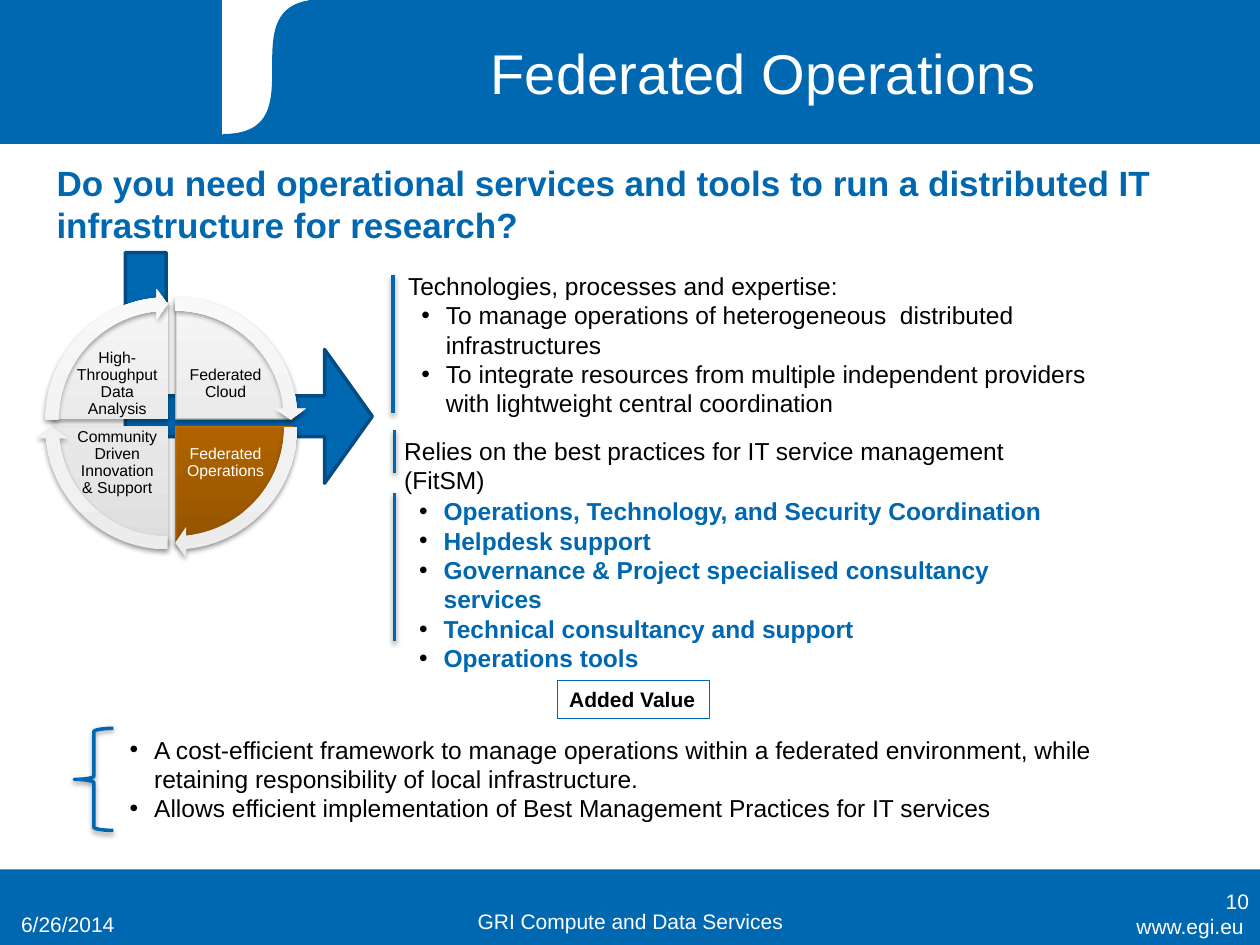
import lxml.etree
import pptx
import pptx.dml.color
import pptx.enum.shapes
import pptx.enum.text
import pptx.oxml
import pptx.oxml.ns
import pptx.util

Pt = pptx.util.Pt
RGB = pptx.dml.color.RGBColor
KIND = pptx.enum.shapes.MSO_SHAPE
ALIGN = pptx.enum.text.PP_ALIGN
ANCHOR = pptx.enum.text.MSO_ANCHOR
qn = pptx.oxml.ns.qn

BLUE = RGB(0x00, 0x67, 0xB1)
NAVY = RGB(0x00, 0x4C, 0x83)
WHITE = RGB(0xFF, 0xFF, 0xFF)
BLACK = RGB(0x00, 0x00, 0x00)
GREY = RGB(0xAF, 0xAF, 0xAF)
AMBER = RGB(0xC4, 0x6F, 0x00)

# Gradients: (position in percent, colour), from bottom to top
PALE = [(0, RGB(0xDD, 0xDD, 0xDD)), (35, RGB(0xE7, 0xE7, 0xE7)), (100, RGB(0xF6, 0xF6, 0xF6))]
LIGHT = [(0, RGB(0xEC, 0xEC, 0xEC)), (35, RGB(0xF1, 0xF1, 0xF1)), (100, RGB(0xF9, 0xF9, 0xF9))]
BROWN = [(0, RGB(0x95, 0x54, 0x00)), (80, RGB(0xC2, 0x6D, 0x00)), (100, RGB(0xC3, 0x6E, 0x00))]

# Wheel angles, in adjustment units (60000 per degree / 100000)
TURN, QUARTER, SWEEP = 216, 54, 50.725


def put(item, values):
    for name, value in values.items():
        setattr(item, name, value)


def sub(node, tag, **values):
    child = lxml.etree.SubElement(node, qn(tag))
    for name, value in values.items():
        child.set(name, str(value))
    return child


def shade(props):
    """Give a soft drop shadow to shape properties."""
    effects = props.find(qn("a:effectLst"))
    if effects is None:
        effects = sub(props, "a:effectLst")
    shadow = sub(effects, "a:outerShdw", blurRad=Pt(3.1), dist=Pt(1.6),
                 dir=5400000, algn="ctr", rotWithShape=0)
    sub(sub(shadow, "a:srgbClr", val="000000"), "a:alpha", val=38000)


def blend(shape, stops):
    """Fill a shape with an upward gradient."""
    shape.fill.gradient()
    grad = shape._element.spPr.find(qn("a:gradFill"))
    for child in list(grad):
        grad.remove(child)
    row = sub(grad, "a:gsLst")
    for spot, color in stops:
        sub(sub(row, "a:gs", pos=spot * 1000), "a:srgbClr", val=color)
    sub(grad, "a:lin", ang=16200000, scaled=0)


def paint(shape, fill=None, line=None, width=0.75, shadow=False):
    shape.shadow.inherit = False
    if isinstance(fill, list):
        blend(shape, fill)
    elif fill is None:
        shape.fill.background()
    else:
        shape.fill.solid()
        shape.fill.fore_color.rgb = fill
    if line is None:
        shape.line.fill.background()
    else:
        shape.line.color.rgb = line
        shape.line.width = Pt(width)
    if shadow:
        shade(shape._element.spPr)
    return shape


def draw(slide, kind, box, adjust=(), **style):
    shape = slide.shapes.add_shape(kind, *map(Pt, box))
    for index, value in enumerate(adjust):
        shape.adjustments[index] = value
    return paint(shape, **style)


def bar(slide, x, top, base):
    line = slide.shapes.add_connector(pptx.enum.shapes.MSO_CONNECTOR.STRAIGHT,
                                      Pt(x), Pt(top), Pt(x), Pt(base))
    line.line.color.rgb = BLUE
    line.line.width = Pt(2)
    shade(line._element.spPr)


def dot(para, left):
    """Make a paragraph a black bullet point with a hanging indent."""
    props = para._p.get_or_add_pPr()
    props.set("marL", str(Pt(left)))
    props.set("indent", str(-Pt(14)))
    sub(sub(props, "a:buClr"), "a:srgbClr", val=BLACK)
    sub(props, "a:buFont", typeface="Arial")
    sub(props, "a:buChar", char="•")


def write(frame, lines, size, color=BLACK, bold=False, plain=0, left=14, dots=False,
          inset=None, wrap=True, anchor=ANCHOR.TOP, **form):
    """Write lines; with dots, those after the first `plain` lines get bullets."""
    put(frame, {"word_wrap": wrap, "vertical_anchor": anchor})
    if inset is not None:
        sides = ("left", "right", "top", "bottom")
        put(frame, {"margin_" + side: Pt(inset) for side in sides})
    for index, line in enumerate(lines):
        para = frame.paragraphs[0] if index == 0 else frame.add_paragraph()
        put(para, form)
        if dots and index >= plain:
            dot(para, left)
        run = para.add_run()
        run.text = line
        put(run.font, {"name": "Arial", "size": Pt(size), "bold": bold})
        run.font.color.rgb = color


def note(slide, box, lines, size, **style):
    write(slide.shapes.add_textbox(*map(Pt, box)).text_frame, lines, size, **style)


def swoosh(slide):
    """Blue panel whose left edge is an S-shaped curve over a white block."""
    left, right, base, bend = 127.5, 269.5, 77, 184.3
    draw(slide, KIND.RECTANGLE, (left, 0, right - left, base), fill=WHITE, line=WHITE)
    curve = []
    for step in range(1, 41):
        t = step / 40
        u = 1 - t
        x = left * (u ** 3 + 3 * u * t * t) + bend * (3 * u * u * t + t ** 3)
        y = base * (u ** 3 + 3 * u * u * t)
        curve.append((Pt(x), Pt(y)))
    path = slide.shapes.build_freeform(Pt(right), Pt(0))
    path.add_line_segments([(Pt(right), Pt(base)), (Pt(left), Pt(base))] + curve)
    paint(path.convert_to_shape(), fill=BLUE, line=BLUE)


def wheel(slide):
    """Four labelled quarters, clockwise from top right, ringed by arrows."""
    gap = 4.3
    parts = [
        ("Federated Cloud", 1, 0, PALE, GREY, BLACK),
        ("Federated Operations", 1, 1, BROWN, AMBER, WHITE),
        ("Community Driven Innovation & Support", 0, 1, PALE, None, BLACK),
        ("High-Throughput Data Analysis", 0, 0, PALE, None, BLACK),
    ]
    starts = [(index * QUARTER - QUARTER) % TURN for index in range(4)]
    for (label, col, row, fill, line, color), start in zip(parts, starts):
        draw(slide, KIND.PIE, (29.5 + col * gap, 172.8 + row * gap, 133.2, 133.2),
             (start, (start + QUARTER) % TURN), fill=fill, line=line, shadow=True)
        note(slide, (42.5 + col * 61.9, 200.9 + row * 45.3, 49, 36.7), [label], 9,
             color=color, inset=0.9, anchor=ANCHOR.MIDDLE, alignment=ALIGN.CENTER,
             line_spacing=0.9, space_after=Pt(3))
    for (_, col, row, *_), start in zip(parts, starts):
        draw(slide, KIND.CIRCULAR_ARROW, (20.9 + col * gap, 164.9 + row * gap, 149.8, 149.8),
             (0.051, 3.275, start + SWEEP, start, 0.059), fill=LIGHT, shadow=True)


def main():
    deck = pptx.Presentation()
    put(deck, {"slide_width": Pt(720), "slide_height": Pt(540)})
    slide = deck.slides.add_slide(deck.slide_layouts[6])

    # Header and footer
    draw(slide, KIND.RECTANGLE, (0, 496.8, 720, 43.2), fill=BLUE)
    draw(slide, KIND.RECTANGLE, (0, 0, 720, 82), fill=BLUE, line=BLUE)
    swoosh(slide)
    note(slide, (167, 9.4, 538.6, 68.4), ["Federated Operations"], 32, color=WHITE,
         anchor=ANCHOR.MIDDLE, alignment=ALIGN.CENTER, line_spacing=0.9)
    for box, text, anchor, align in [
        ((604, 518.4, 113.8, 22.3), "www.egi.eu", ANCHOR.TOP, ALIGN.RIGHT),
        ((5, 509.8, 167.8, 28.8), "6/26/2014", ANCHOR.BOTTOM, ALIGN.LEFT),
        ((246.2, 508.3, 228.2, 28.8), "GRI Compute and Data Services", ANCHOR.BOTTOM, ALIGN.CENTER),
        ((553, 500.4, 167.8, 28.8), "10", ANCHOR.MIDDLE, ALIGN.RIGHT),
    ]:
        note(slide, box, [text], 12, color=WHITE, anchor=anchor, alignment=align)

    # Question and offer
    note(slide, (25.2, 88.6, 663, 55.4), ["Do you need operational services and tools to run a "
         "distributed IT infrastructure for research?"], 20, color=BLUE, bold=True)
    note(slide, (226.1, 151.2, 406, 92), [
        "Technologies, processes and expertise:",
        "To manage operations of heterogeneous  distributed infrastructures",
        "To integrate resources from multiple independent providers with lightweight "
        "central coordination"], 14, dots=True, plain=1, left=21.6)
    note(slide, (225.4, 280, 406.8, 92), [
        "Operations, Technology, and Security Coordination",
        "Helpdesk support",
        "Governance & Project specialised consultancy services",
        "Technical consultancy and support",
        "Operations tools"], 14, color=BLUE, bold=True, dots=True, left=21)
    note(slide, (223.9, 245.5, 406, 24.5),
         ["Relies on the best practices for IT service management (FitSM)"], 14)
    for x, top, base in [(224.6, 157, 236.2), (225.4, 245.5, 270), (225.4, 281.5, 366.5)]:
        bar(slide, x, top, base)

    # Added value
    badge = draw(slide, KIND.RECTANGLE, (318.2, 389, 87.1, 21.6), fill=WHITE, line=BLUE, width=0.25)
    write(badge.text_frame, ["Added Value"], 12, bold=True, wrap=False, alignment=ALIGN.LEFT)
    note(slide, (67, 416.2, 582.5, 58.3), [
        "A cost-efficient framework to manage operations within a federated environment, "
        "while retaining responsibility of local infrastructure.",
        "Allows efficient implementation of Best Management Practices for IT services"],
        14, dots=True)

    # Bent arrow, wheel and brace
    arrow = draw(slide, KIND.BENT_UP_ARROW, (76.3, 139.7, 131.8, 141.1), (0.177, 0.29, 0.207),
                 fill=BLUE, line=NAVY, width=2)
    arrow.rotation = 270
    for flip in ("flipH", "flipV"):
        arrow._element.spPr.xfrm.set(flip, "1")
    wheel(slide)
    draw(slide, KIND.LEFT_BRACE, (42.5, 416.2, 22.3, 58.3), line=BLUE, width=2, shadow=True)

    deck.save("out.pptx")


if __name__ == "__main__":
    main()
